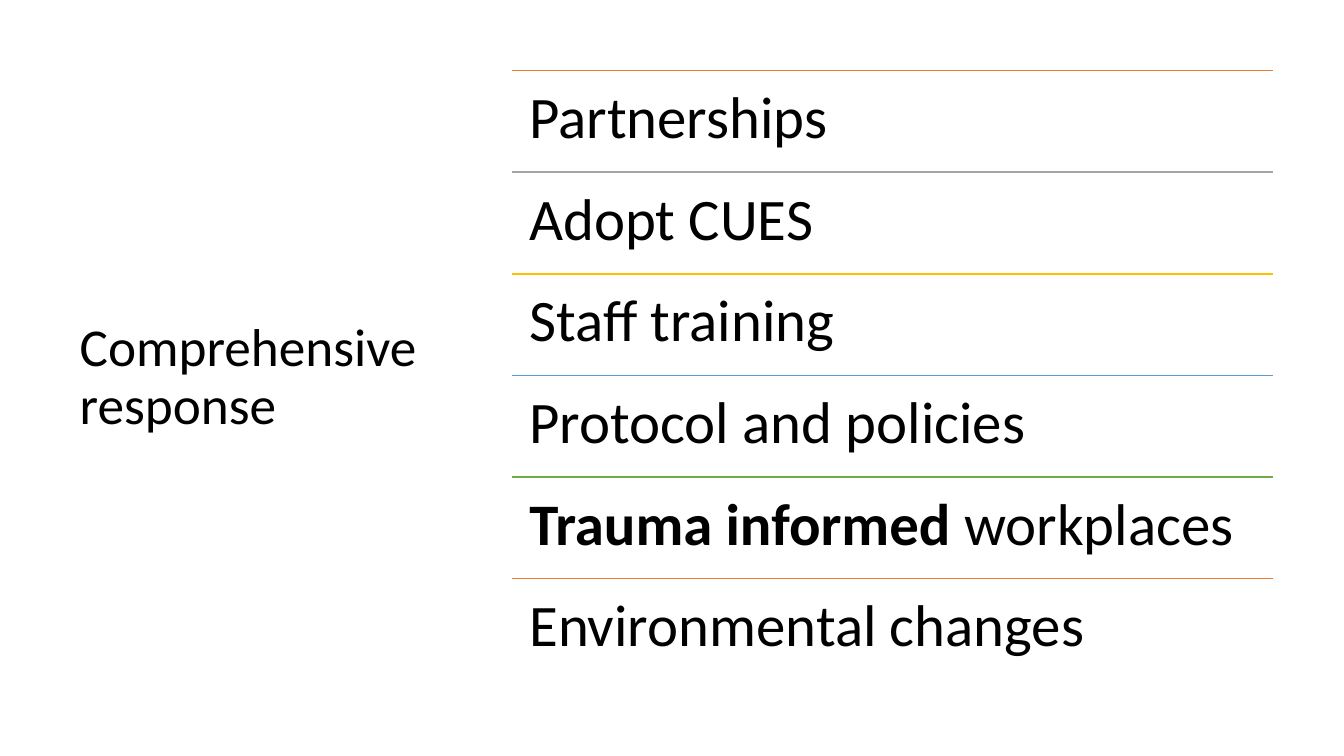
from pptx import Presentation
from pptx.dml.color import RGBColor as Rgb
from pptx.enum.shapes import MSO_CONNECTOR as Link
from pptx.enum.text import MSO_ANCHOR as Anchor, MSO_AUTO_SIZE as Fit, PP_ALIGN as Align
from pptx.oxml.ns import qn
from pptx.util import Inches, Pt
from lxml.etree import SubElement

HUES = {"ink": "000000", "orange": "ED7D31", "gray": "A5A5A5",
        "gold": "FFC000", "blue": "5B9BD5", "green": "70AD47"}
ROWS = [
    ("orange", [("Partnerships", False)]),
    ("gray", [("Adopt CUES", False)]),
    ("gold", [("Staff training", False)]),
    ("blue", [("Protocol and policies", False)]),
    ("green", [("Trauma informed ", True), ("workplaces", False)]),
    ("orange", [("Environmental changes", False)]),
]


def write(para, text, size=42, bold=False, hue="ink"):
    para.alignment = Align.LEFT
    para.line_spacing = 0.9
    run = para.add_run()
    run.text = text
    run.font.name = "Calibri"
    run.font.size = Pt(size)
    run.font.bold = bold
    run.font.color.rgb = Rgb.from_string(HUES[hue])


deck = Presentation()
deck.slide_width, deck.slide_height = Inches(13.33), Inches(7.5)
slide = deck.slides.add_slide(deck.slide_layouts[5])
shapes = slide.shapes

top = Inches(0.7)
left, wide = Inches(5.08), Inches(7.55)
step = Inches(6.05) // len(ROWS)
pad = Inches(0.17)

title = shapes.title
title.left, title.top = Inches(0.69), top
title.width, title.height = Inches(3.74), Inches(6.11)
frame = title.text_frame
frame.auto_size = Fit.NONE
frame.word_wrap = True
frame.vertical_anchor = Anchor.MIDDLE
write(frame.paragraphs[0], "Comprehensive response", size=38)

for row, (hue, parts) in enumerate(ROWS):
    y = top + row * step
    rule = shapes.add_connector(Link.STRAIGHT, left, y, left + wide, y)
    rule.line.color.rgb = Rgb.from_string(HUES[hue])
    rule.line.width = Pt(1)
    SubElement(rule.element.spPr, qn("a:effectLst"))

    frame = shapes.add_textbox(left, y, wide, step).text_frame
    frame.word_wrap = True
    frame.vertical_anchor = Anchor.TOP
    frame.margin_left = frame.margin_right = pad
    frame.margin_top = frame.margin_bottom = pad
    for text, bold in parts:
        write(frame.paragraphs[0], text, bold=bold)

deck.save("out.pptx")
